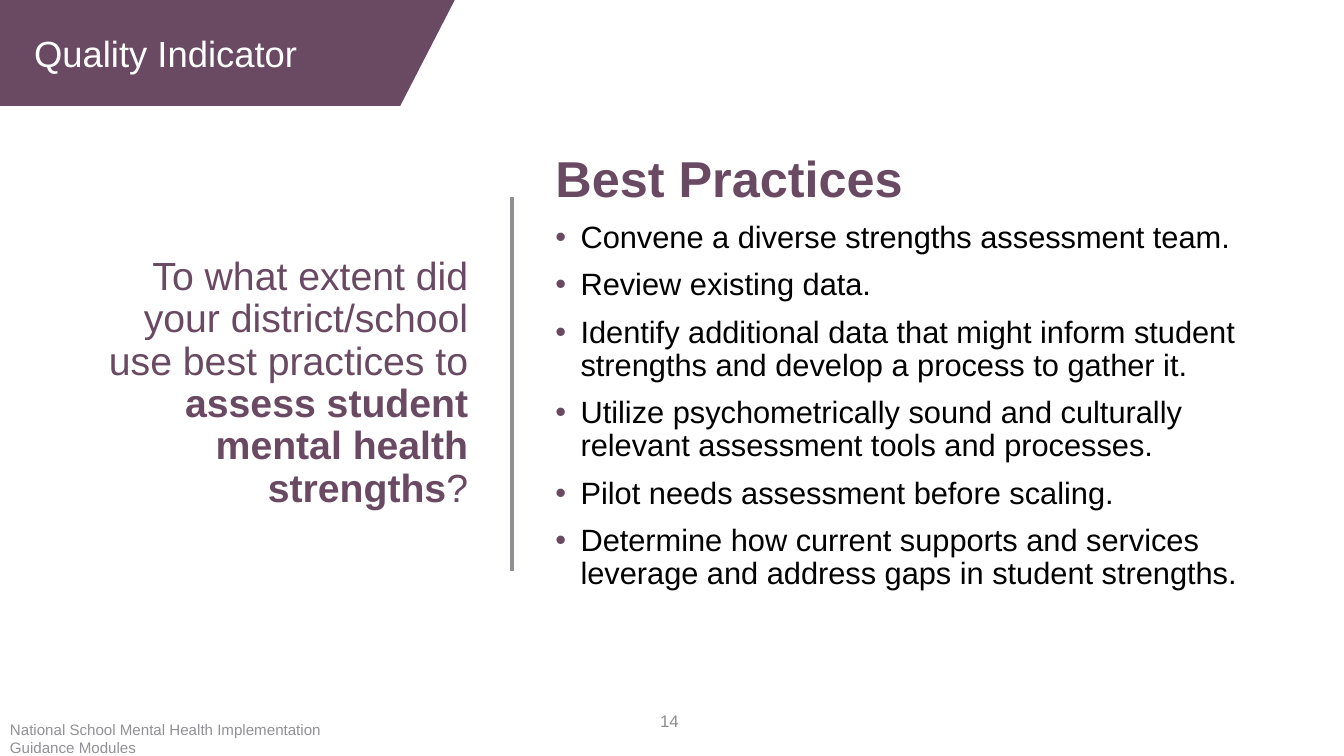
from lxml.etree import SubElement
from pptx import Presentation
from pptx.dml.color import RGBColor
from pptx.enum.shapes import MSO_CONNECTOR
from pptx.enum.text import MSO_ANCHOR, PP_ALIGN
from pptx.oxml.ns import qn
from pptx.util import Pt

PLUM, GRAY, BLACK, WHITE = "6A4A62", "919195", "000000", "FFFFFF"
FONT = "Arial"
PX = 9144  # EMU in one px, 100 px to the inch
SLIDE_SIZE = (1333, 750)

LABEL = "Quality Indicator"
QUESTION = [
    ("To what extent did your district/school use best practices to ", False),
    ("assess student mental health strengths", True),
    ("?", False),
]
HEADING = "Best Practices"
PRACTICES = [
    "Convene a diverse strengths assessment team.",
    "Review existing data.",
    "Identify additional data that might inform student strengths and develop a process to gather it.",
    "Utilize psychometrically sound and culturally relevant assessment tools and processes.",
    "Pilot needs assessment before scaling.",
    "Determine how current supports and services leverage and address gaps in student strengths.",
]
FOOTER = "National School Mental Health Implementation Guidance Modules"
PAGE_NUMBER = "14"

BANNER = [(0, 0), (451, 0), (397, 105), (0, 105)]
LABEL_BOX = (24, 26, 318, 54)
QUESTION_BOX = (92, 195, 382, 371)
PRACTICES_BOX = (541, 100, 732, 539)
DIVIDER_X = 508
FOOTER_BOX = (0, 710, 381, 40)
NUMBER_BOX = (383, 695, 300, 40)
BULLET_INDENT = 25


def emu(lengths):
    return [length * PX for length in lengths]


def rgb(color):
    return RGBColor.from_string(color)


def add_box(slide, box, anchor=MSO_ANCHOR.TOP):
    """Add a wrapping text box and return its text frame."""
    frame = slide.shapes.add_textbox(*emu(box)).text_frame
    frame.word_wrap = True
    frame.vertical_anchor = anchor
    return frame


def add_bullet(paragraph, color):
    properties = paragraph._p.get_or_add_pPr()
    properties.set("marL", str(BULLET_INDENT * PX))
    properties.set("indent", str(-BULLET_INDENT * PX))
    bullet_color = SubElement(properties, qn("a:buClr"))
    SubElement(bullet_color, qn("a:srgbClr"), val=color)
    SubElement(properties, qn("a:buFont"), typeface=FONT)
    SubElement(properties, qn("a:buChar"), char="•")


def write(frame, text, size, color, bold=False, align=PP_ALIGN.LEFT,
          line_spacing=None, space_before=0, bullet=None):
    """Add a paragraph; text is a string or a list of (text, bold) runs."""
    first = frame.paragraphs[0]
    paragraph = frame.add_paragraph() if first.runs else first
    paragraph.alignment = align
    paragraph.line_spacing = line_spacing
    paragraph.space_before = Pt(space_before)
    if bullet:
        add_bullet(paragraph, bullet)
    runs = [(text, bold)] if isinstance(text, str) else text
    for run_text, run_bold in runs:
        run = paragraph.add_run()
        run.text = run_text
        run.font.name = FONT
        run.font.size = Pt(size)
        run.font.bold = run_bold
        run.font.color.rgb = rgb(color)


def add_banner(slide):
    builder = slide.shapes.build_freeform(*BANNER[0], scale=PX)
    builder.add_line_segments(BANNER[1:], close=True)
    banner = builder.convert_to_shape()
    banner.shadow.inherit = False
    banner.fill.solid()
    banner.fill.fore_color.rgb = rgb(PLUM)
    banner.line.fill.background()
    write(add_box(slide, LABEL_BOX), LABEL, 26, WHITE)


def add_divider(slide):
    top, height = QUESTION_BOX[1], QUESTION_BOX[3]
    ends = emu((DIVIDER_X, top, DIVIDER_X, top + height))
    divider = slide.shapes.add_connector(MSO_CONNECTOR.STRAIGHT, *ends)
    divider.line.color.rgb = rgb(GRAY)
    divider.line.width = Pt(3)
    SubElement(divider._element.spPr, qn("a:effectLst"))


def main():
    presentation = Presentation()
    presentation.slide_width, presentation.slide_height = emu(SLIDE_SIZE)
    slide = presentation.slides.add_slide(presentation.slide_layouts[6])

    write(add_box(slide, NUMBER_BOX, MSO_ANCHOR.MIDDLE), PAGE_NUMBER, 12,
          "8C8C8C", align=PP_ALIGN.RIGHT)
    add_banner(slide)
    write(add_box(slide, QUESTION_BOX, MSO_ANCHOR.MIDDLE), QUESTION, 28, PLUM,
          align=PP_ALIGN.RIGHT, line_spacing=0.9)

    practices = add_box(slide, PRACTICES_BOX, MSO_ANCHOR.MIDDLE)
    write(practices, HEADING, 36, PLUM, bold=True, line_spacing=0.9)
    for practice in PRACTICES:
        write(practices, practice, 22, BLACK, line_spacing=0.9,
              space_before=10, bullet=PLUM)

    add_divider(slide)
    write(add_box(slide, FOOTER_BOX), FOOTER, 10.8, GRAY)
    presentation.save("out.pptx")


if __name__ == "__main__":
    main()
